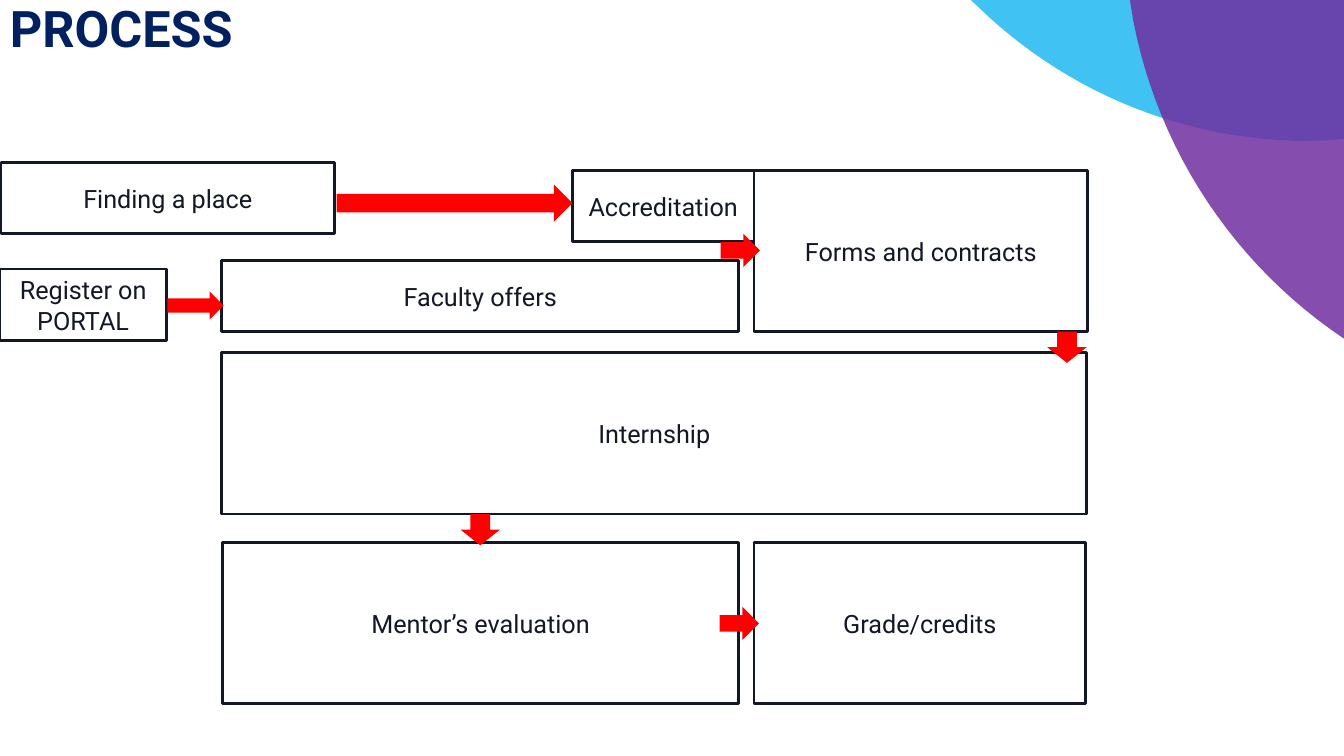
from dataclasses import dataclass

from lxml.etree import SubElement
from pptx import Presentation
from pptx.dml.color import RGBColor
from pptx.enum.shapes import MSO_SHAPE as Preset
from pptx.enum.text import MSO_ANCHOR as Anchor, PP_ALIGN as Align
from pptx.oxml.ns import qn
from pptx.util import Pt

NAVY, INK, WHITE, RED = "002060", "121826", "FFFFFF", "FF0000"
CYAN, PURPLE = "00B0F0", "7030A0"
CURVE_STEPS = 24
LOW, HIGH = 51.1, 115.2  # the two box heights
Point = tuple[float, float]


@dataclass
class Step:
    text: str
    left: float
    top: float
    width: float
    height: float


@dataclass
class Arrow:
    left: float
    top: float
    width: float
    height: float
    preset: Preset = Preset.RIGHT_ARROW


STEPS = [
    Step("Finding a place", 0.7, 115.9, 238.3, LOW),
    Step("Faculty offers", 158.4, 185.8, 369.4, LOW),
    Step("Accreditation", 409, 121.7, 129.6, LOW),
    Step("Forms and contracts", 538.6, 121.7, 238.3, HIGH),
    Step("Internship", 158.4, 252, 618, HIGH),
    Step("Mentor’s evaluation", 159, 387.4, 368.6, HIGH),
    Step("Grade/credits", 538.6, 387.4, 236.9, HIGH),
    Step("Register on PORTAL", 0, 192.2, 118.8, LOW),
]

ARROWS = [
    Arrow(119.5, 208.1, 40.3, 20.2),
    Arrow(514.1, 433.4, 28.1, 23.8),
    Arrow(240.5, 131.8, 168.5, 26.6),
    Arrow(514.8, 167, 28.1, 23.8),
    Arrow(748.1, 236.9, 28.1, 22.3, Preset.DOWN_ARROW),
    Arrow(329, 367.2, 28.1, 22.3, Preset.DOWN_ARROW),
]


def color(value: str) -> RGBColor:
    return RGBColor.from_string(value)


def paint(shape, fill: str, line: str | None = None, alpha: int = 100) -> None:
    shape.shadow.inherit = False
    shape.fill.solid()
    shape.fill.fore_color.rgb = color(fill)
    if alpha < 100:
        tint = shape.fill._xPr.find(qn("a:solidFill"))[0]
        SubElement(tint, qn("a:alpha")).set("val", str(alpha * 1000))
    if line:
        shape.line.color.rgb = color(line)
        shape.line.width = Pt(2)
    else:
        shape.line.fill.background()


def write(shape, text: str, *, size: float, ink: str, bold: bool = False,
          align: Align = Align.LEFT, anchor: Anchor = Anchor.TOP) -> None:
    frame = shape.text_frame
    frame.word_wrap = True
    frame.vertical_anchor = anchor
    paragraph = frame.paragraphs[0]
    paragraph.alignment = align
    run = paragraph.add_run()
    run.text = text
    run.font.name = "Roboto"
    run.font.size = Pt(size)
    run.font.bold = bold
    run.font.color.rgb = color(ink)


def bezier(start: Point, first: Point, second: Point, end: Point) -> list[Point]:
    points = []
    for step in range(1, CURVE_STEPS + 1):
        t = step / CURVE_STEPS
        weights = ((1 - t) ** 3, 3 * t * (1 - t) ** 2, 3 * t * t * (1 - t), t ** 3)
        corners = (start, first, second, end)
        points.append((sum(w * x for w, (x, _) in zip(weights, corners)),
                       sum(w * y for w, (_, y) in zip(weights, corners))))
    return points


def add_disc(slide, outline: list[Point], fill: str, alpha: int) -> None:
    points = [(Pt(x), Pt(y)) for x, y in outline]
    builder = slide.shapes.build_freeform(*points[0], scale=1.0)
    builder.add_line_segments(points[1:], close=True)
    paint(builder.convert_to_shape(), fill, alpha=alpha)


def add_preset(slide, preset: Preset, item: Step | Arrow):
    return slide.shapes.add_shape(
        preset, Pt(item.left), Pt(item.top), Pt(item.width), Pt(item.height))


def main() -> None:
    presentation = Presentation()
    presentation.slide_width, presentation.slide_height = Pt(960), Pt(540)
    slide = presentation.slides.add_slide(presentation.slide_layouts[6])

    # Corner discs
    cyan = [(693.4, 0), (960, 0), (960, 99.4), (951.8, 100.1)]
    cyan += bezier(cyan[-1], (946.8, 100.1), (941, 100.8), (935.3, 100.8))
    cyan += bezier(cyan[-1], (846.7, 100.8), (766.1, 67), (705.6, 11.5))
    add_disc(slide, cyan, CYAN, 75)
    purple = [(807.1, 0), (960, 0), (960, 241.9)]
    purple += bezier(purple[-1], (882.7, 190.1), (827.3, 108.7), (809.3, 13.7))
    add_disc(slide, purple, PURPLE, 85)

    # Title
    title = slide.shapes.add_textbox(Pt(0), Pt(-2.2), Pt(648), Pt(45.4))
    frame = title.text_frame
    frame.margin_left, frame.margin_top = Pt(7.2), Pt(0)
    frame.margin_right, frame.margin_bottom = Pt(0), Pt(3.6)
    write(title, "PROCESS", size=36, ink=NAVY, bold=True)

    # Process steps
    for step in STEPS:
        box = add_preset(slide, Preset.RECTANGLE, step)
        paint(box, WHITE, INK)
        write(box, step.text, size=18, ink=INK, align=Align.CENTER, anchor=Anchor.MIDDLE)

    # Arrows between the steps
    for arrow in ARROWS:
        paint(add_preset(slide, arrow.preset, arrow), RED)

    presentation.save("out.pptx")


if __name__ == "__main__":
    main()
